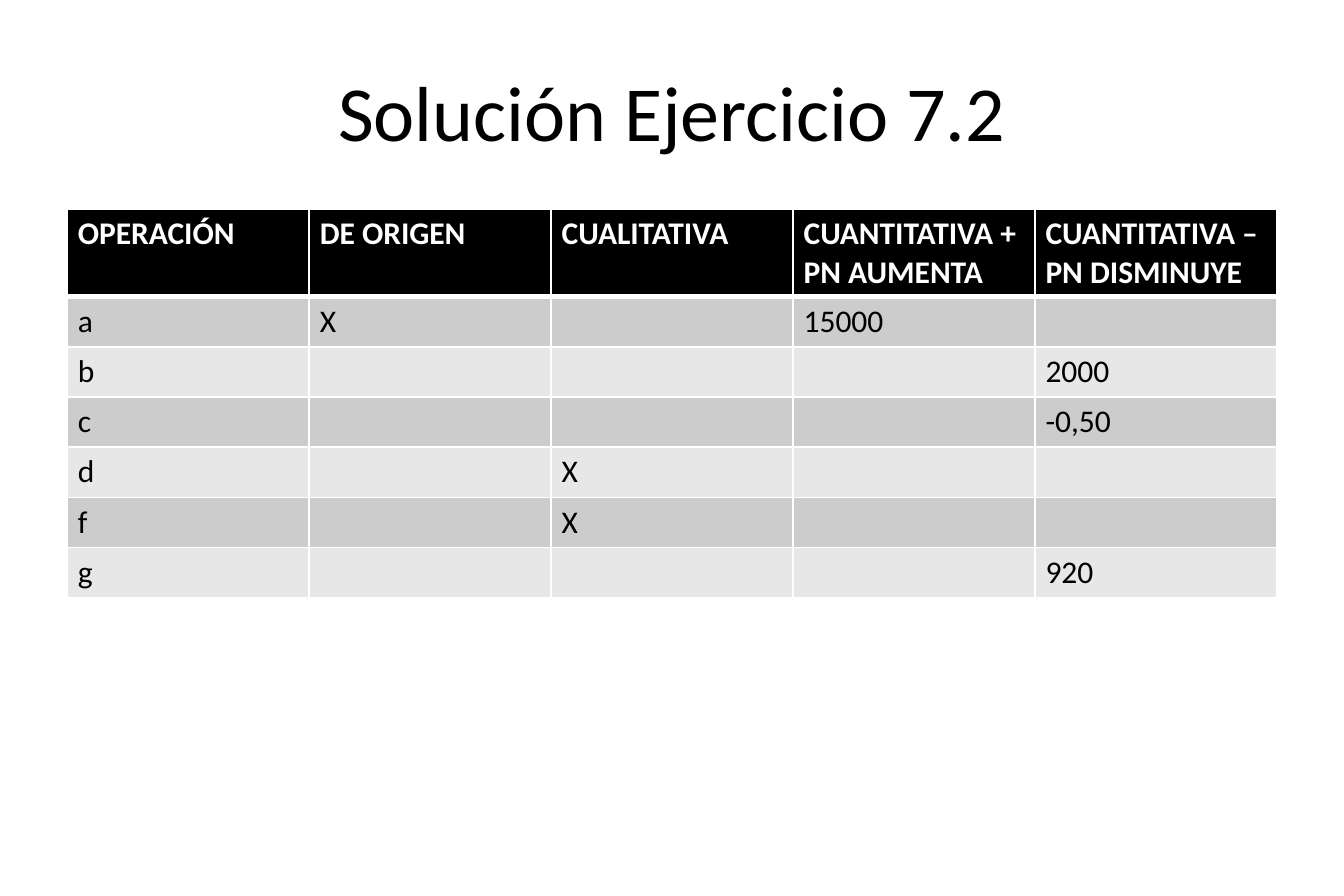
from lxml.etree import SubElement
from pptx import Presentation
from pptx.dml.color import RGBColor
from pptx.enum.text import MSO_ANCHOR as Anchor, PP_ALIGN as Align
from pptx.oxml.ns import qn
from pptx.util import Inches, Pt

COLORS = {
    "text": "000000",
    "header": "000000",
    "header_text": "FFFFFF",
    "odd_row": "CCCCCC",
    "even_row": "E7E7E7",
    "border": "FFFFFF",
}
FONT = "Calibri"
SLIDE_WIDTH, SLIDE_HEIGHT = 11.25, 7.5
MARGIN = SLIDE_WIDTH * 0.05
CONTENT_WIDTH = SLIDE_WIDTH - 2 * MARGIN
HEADER_HEIGHT, ROW_HEIGHT = 0.72, 0.42

HEADINGS = [
    "OPERACIÓN",
    "DE ORIGEN",
    "CUALITATIVA",
    "CUANTITATIVA +\nPN AUMENTA",
    "CUANTITATIVA – PN DISMINUYE",
]
OPERATIONS = [
    ["a", "X", "", "15000", ""],
    ["b", "", "", "", "2000"],
    ["c", "", "", "", "-0,50"],
    ["d", "", "X", "", ""],
    ["f", "", "X", "", ""],
    ["g", "", "", "", "920"],
]


def write_text(frame, text, size, color="text", bold=False, align=Align.LEFT):
    frame.word_wrap = True
    frame.text = text
    for paragraph in frame.paragraphs:
        paragraph.alignment = align
        for run in paragraph.runs:
            run.font.name = FONT
            run.font.size = Pt(size)
            run.font.bold = bold
            run.font.color.rgb = RGBColor.from_string(COLORS[color])


def set_borders(cell, top, bottom):
    """Draw the four cell borders; top and bottom are widths in points."""
    properties = cell._tc.get_or_add_tcPr()
    for side, width in (("L", 1), ("R", 1), ("T", top), ("B", bottom)):
        line = SubElement(properties, qn(f"a:ln{side}"), w=str(Pt(width)))
        fill = SubElement(line, qn("a:solidFill"))
        SubElement(fill, qn("a:srgbClr"), val=COLORS["border"])


def add_title(slide, text, left, top, width, height):
    box = slide.shapes.add_textbox(*map(Inches, (left, top, width, height)))
    frame = box.text_frame
    frame.vertical_anchor = Anchor.MIDDLE
    write_text(frame, text, size=47, align=Align.CENTER)


def add_operations_table(slide, rows, left, top, width):
    height = HEADER_HEIGHT + ROW_HEIGHT * (len(rows) - 1)
    table = slide.shapes.add_table(
        len(rows), len(rows[0]), *map(Inches, (left, top, width, height))
    ).table
    table.rows[0].height = Inches(HEADER_HEIGHT)
    for row in list(table.rows)[1:]:
        row.height = Inches(ROW_HEIGHT)

    for row_index, values in enumerate(rows):
        is_header = row_index == 0
        band = "header" if is_header else "odd_row" if row_index % 2 else "even_row"
        for column_index, value in enumerate(values):
            cell = table.cell(row_index, column_index)
            cell.margin_left = cell.margin_right = Inches(0.09)
            set_borders(cell, top=3 if row_index == 1 else 1, bottom=3 if is_header else 1)
            cell.fill.solid()
            cell.fill.fore_color.rgb = RGBColor.from_string(COLORS[band])
            write_text(
                cell.text_frame,
                value,
                size=19,
                color="header_text" if is_header else "text",
                bold=is_header,
            )


def main():
    presentation = Presentation()
    presentation.slide_width = Inches(SLIDE_WIDTH)
    presentation.slide_height = Inches(SLIDE_HEIGHT)
    slide = presentation.slides.add_slide(presentation.slide_layouts[6])
    add_title(
        slide, "Solución Ejercicio 7.2",
        MARGIN, SLIDE_HEIGHT * 0.04, CONTENT_WIDTH, SLIDE_HEIGHT / 6,
    )
    add_operations_table(
        slide, [HEADINGS, *OPERATIONS], MARGIN, 1.75, CONTENT_WIDTH
    )
    presentation.save("out.pptx")


if __name__ == "__main__":
    main()
